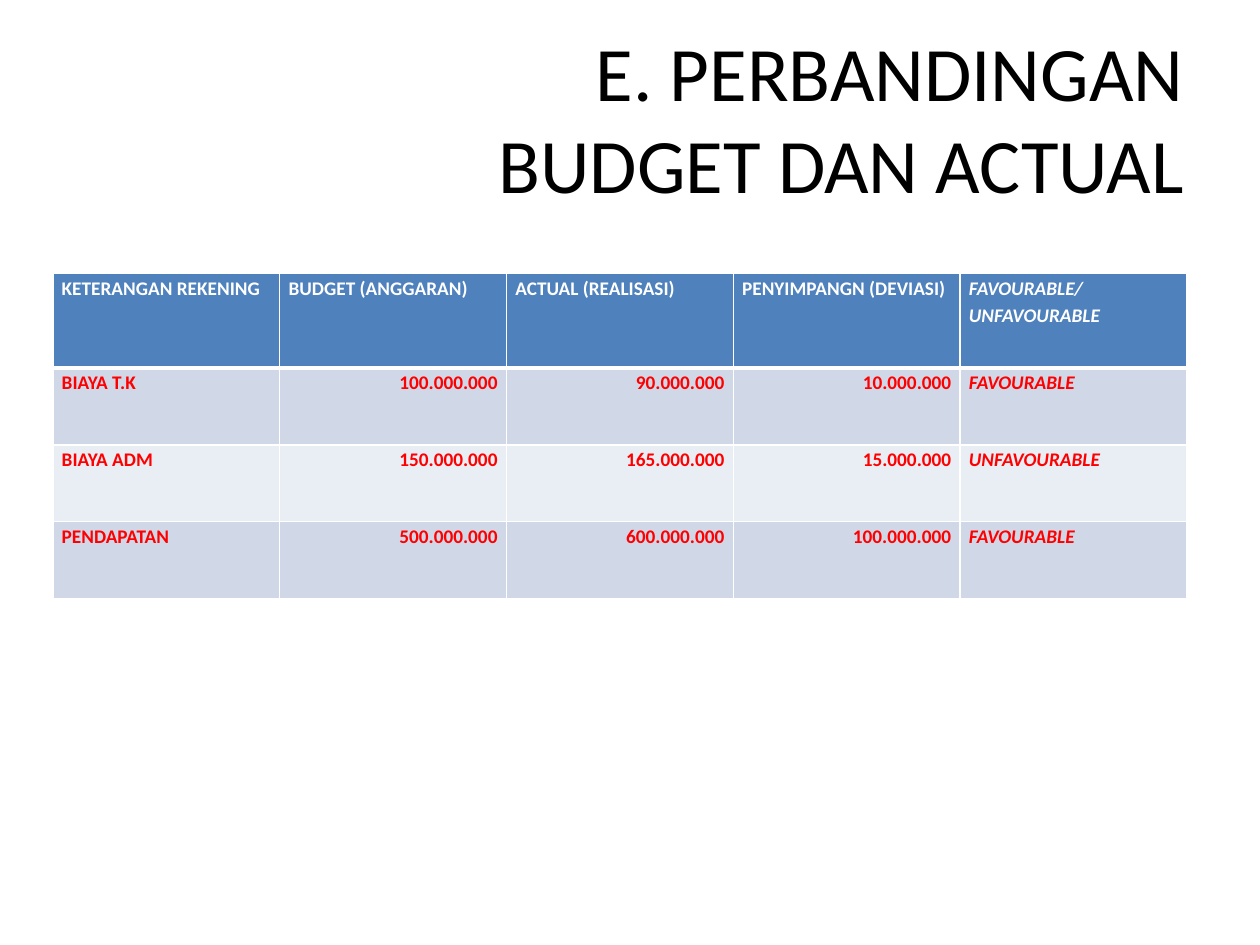
"""Build a slide with a table that compares budget and actual figures."""
import lxml.etree
import pptx
import pptx.dml.color
import pptx.enum.text
import pptx.oxml.ns
import pptx.util

Inches = pptx.util.Inches
Pt = pptx.util.Pt
ALIGN = pptx.enum.text.PP_ALIGN
ANCHOR = pptx.enum.text.MSO_ANCHOR


def color(value):
    return pptx.dml.color.RGBColor.from_string(value)


def write_text(text_frame, text, size, fill, align=ALIGN.LEFT, bold=False,
               italic=False, line_spacing=1.0, space_after=0):
    paragraph = text_frame.paragraphs[0]
    paragraph.text = text
    paragraph.alignment = align
    paragraph.line_spacing = line_spacing
    paragraph.space_after = Pt(space_after)
    for run in paragraph.runs:
        run.font.name = "Calibri"
        run.font.size = Pt(size)
        run.font.bold = bold
        run.font.italic = italic
        run.font.color.rgb = color(fill)


presentation = pptx.Presentation()
presentation.slide_width = Inches(10)
presentation.slide_height = Inches(7.5)
slide = presentation.slides.add_slide(presentation.slide_layouts[5])

title = slide.shapes.title
title.left, title.top = Inches(0.5), Inches(0.3)
title.width, title.height = Inches(9), Inches(1.25)
title.text_frame.auto_size = pptx.enum.text.MSO_AUTO_SIZE.NONE
title.text_frame.vertical_anchor = ANCHOR.MIDDLE
write_text(title.text_frame, "E. PERBANDINGAN\vBUDGET DAN ACTUAL", 44, "000000",
           align=ALIGN.RIGHT)

table_rows = [
    ["KETERANGAN REKENING", "BUDGET (ANGGARAN)", "ACTUAL (REALISASI)",
     "PENYIMPANGN (DEVIASI)", "FAVOURABLE/ UNFAVOURABLE"],
    ["BIAYA T.K", "100.000.000", "90.000.000", "10.000.000", "FAVOURABLE"],
    ["BIAYA ADM", "150.000.000", "165.000.000", "15.000.000", "UNFAVOURABLE"],
    ["PENDAPATAN", "500.000.000", "600.000.000", "100.000.000", "FAVOURABLE"],
]
row_heights = [0.75, 0.61, 0.61, 0.61]
row_fills = ["4F81BD", "D0D8E8", "E9EDF4", "D0D8E8"]

table = slide.shapes.add_table(4, 5, Inches(0.42), Inches(2.17),
                               Inches(9), Inches(2.58)).table
for column in table.columns:
    column.width = Inches(1.8)

for row_index, texts in enumerate(table_rows):
    is_header = row_index == 0
    table.rows[row_index].height = Inches(row_heights[row_index])
    border_widths = {"lnL": 1, "lnR": 1, "lnT": 3 if row_index == 1 else 1,
                     "lnB": 3 if is_header else 1}
    for column_index, text in enumerate(texts):
        cell = table.cell(row_index, column_index)
        cell.margin_left = cell.margin_right = Inches(0.07)
        cell.margin_top = cell.margin_bottom = 0
        cell.vertical_anchor = ANCHOR.TOP
        is_amount = not is_header and 1 <= column_index <= 3
        write_text(cell.text_frame, text, 11, "FFFFFF" if is_header else "FF0000",
                   align=ALIGN.RIGHT if is_amount else ALIGN.LEFT, bold=True,
                   italic=column_index == 4, line_spacing=1.15, space_after=10)
        properties = cell._tc.get_or_add_tcPr()
        for side, width in border_widths.items():
            line = lxml.etree.SubElement(properties, pptx.oxml.ns.qn(f"a:{side}"),
                                         w=str(Pt(width)))
            solid = lxml.etree.SubElement(line, pptx.oxml.ns.qn("a:solidFill"))
            lxml.etree.SubElement(solid, pptx.oxml.ns.qn("a:srgbClr"), val="FFFFFF")
        cell.fill.solid()
        cell.fill.fore_color.rgb = color(row_fills[row_index])

presentation.save("out.pptx")
